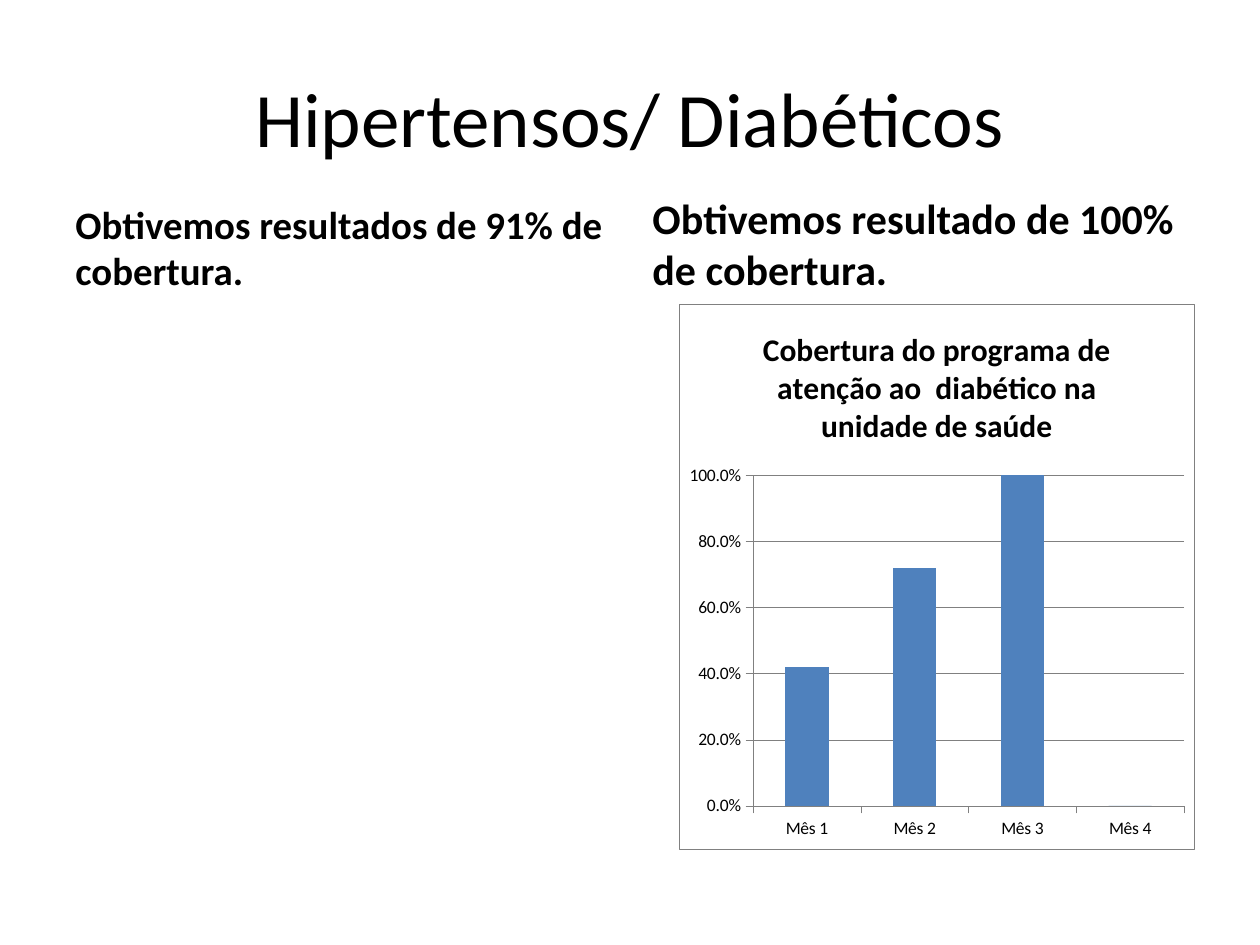
from lxml import etree
from pptx import Presentation
from pptx.chart.data import CategoryChartData
from pptx.dml.color import RGBColor
from pptx.enum.chart import XL_CHART_TYPE as ChartType, XL_TICK_MARK as Tick
from pptx.enum.text import MSO_ANCHOR as Anchor, PP_ALIGN as Align
from pptx.oxml import parse_xml
from pptx.oxml.ns import nsdecls
from pptx.util import Emu, Pt

PX = 9144  # 100 px to the inch
FONT = "Calibri"
BLACK = RGBColor(0x00, 0x00, 0x00)
WHITE = RGBColor(0xFF, 0xFF, 0xFF)
GRAY = RGBColor(0x80, 0x80, 0x80)
BLUE = RGBColor(0x4F, 0x81, 0xBD)
HAIRLINE = Pt(0.25)

CHART_TITLE = "Cobertura do programa de atenção ao  diabético na unidade de saúde"
COVERAGE = {"Mês 1": 0.42, "Mês 2": 0.72, "Mês 3": 1, "Mês 4": 0}


def emu(box):
    return [Emu(v * PX) for v in box]


def style_font(font, size, bold=False):
    font.name = FONT
    font.size = Pt(size)
    font.bold = bold
    font.color.rgb = BLACK


def style_line(line):
    line.color.rgb = GRAY
    line.width = HAIRLINE


def add_title(slide, box, text):
    sp = slide.shapes.title
    sp.left, sp.top, sp.width, sp.height = emu(box)
    tf = sp.text_frame
    tf.text = text
    tf.vertical_anchor = Anchor.MIDDLE
    p = tf.paragraphs[0]
    p.alignment = Align.CENTER
    style_font(p.runs[0].font, 44)


def add_heading(slide, box, text, size):
    tf = slide.shapes.add_textbox(*emu(box)).text_frame
    tf.word_wrap = True
    tf.vertical_anchor = Anchor.BOTTOM
    tf.text = text
    p = tf.paragraphs[0]
    p.alignment = Align.LEFT
    style_font(p.runs[0].font, size, bold=True)


def area_format(border):
    """Chart area properties: white fill, with a thin gray border or no line."""
    line = (f'<a:ln w="{HAIRLINE}"><a:solidFill><a:srgbClr val="{GRAY}"/></a:solidFill></a:ln>'
            if border else "<a:ln><a:noFill/></a:ln>")
    return parse_xml(f'<c:spPr {nsdecls("c", "a")}><a:solidFill><a:srgbClr val="{WHITE}"/>'
                     f"</a:solidFill>{line}</c:spPr>")


def style_axis(axis):
    axis.major_tick_mark = Tick.OUTSIDE
    axis.minor_tick_mark = Tick.NONE
    style_font(axis.tick_labels.font, 10)
    style_line(axis.format.line)


def add_coverage_chart(slide, box):
    data = CategoryChartData(number_format="0.0%")
    data.categories = list(COVERAGE)
    data.add_series(CHART_TITLE, list(COVERAGE.values()))
    chart = slide.shapes.add_chart(ChartType.COLUMN_CLUSTERED, *emu(box), data).chart
    style_font(chart.font, 10)
    chart.has_legend = False

    chart.has_title = True
    tf = chart.chart_title.text_frame
    tf.text = CHART_TITLE
    style_font(tf.paragraphs[0].runs[0].font, 18, bold=True)
    chart.chart_title.include_in_layout = False

    style_axis(chart.category_axis)
    axis = chart.value_axis
    style_axis(axis)
    axis.minimum_scale, axis.maximum_scale, axis.major_unit = 0, 1, 0.2
    axis.tick_labels.number_format = "0.0%"
    axis.tick_labels.number_format_is_linked = False
    axis.has_major_gridlines = True
    style_line(axis.major_gridlines.format.line)

    plot = chart.plots[0]
    plot.gap_width = 150
    plot.vary_by_categories = False
    fill = plot.series[0].format.fill
    fill.solid()
    fill.fore_color.rgb = BLUE

    root = chart.element
    root.chart.addnext(area_format(border=True))
    root.chart.plotArea.append(area_format(border=False))


def main():
    prs = Presentation()
    prs.slide_width, prs.slide_height = emu((1000, 750))
    slide = prs.slides.add_slide(prs.slide_layouts[5])
    add_title(slide, (50, 30, 900, 125), "Hipertensos/ Diabéticos")
    add_heading(slide, (50, 168, 442, 70), "Obtivemos resultados de 91% de cobertura.", 22.2)
    add_heading(slide, (508, 155, 442, 83), "Obtivemos resultado de 100% de cobertura.", 24)
    add_coverage_chart(slide, (539, 241, 409, 433))
    prs.save("out.pptx")


if __name__ == "__main__":
    main()
